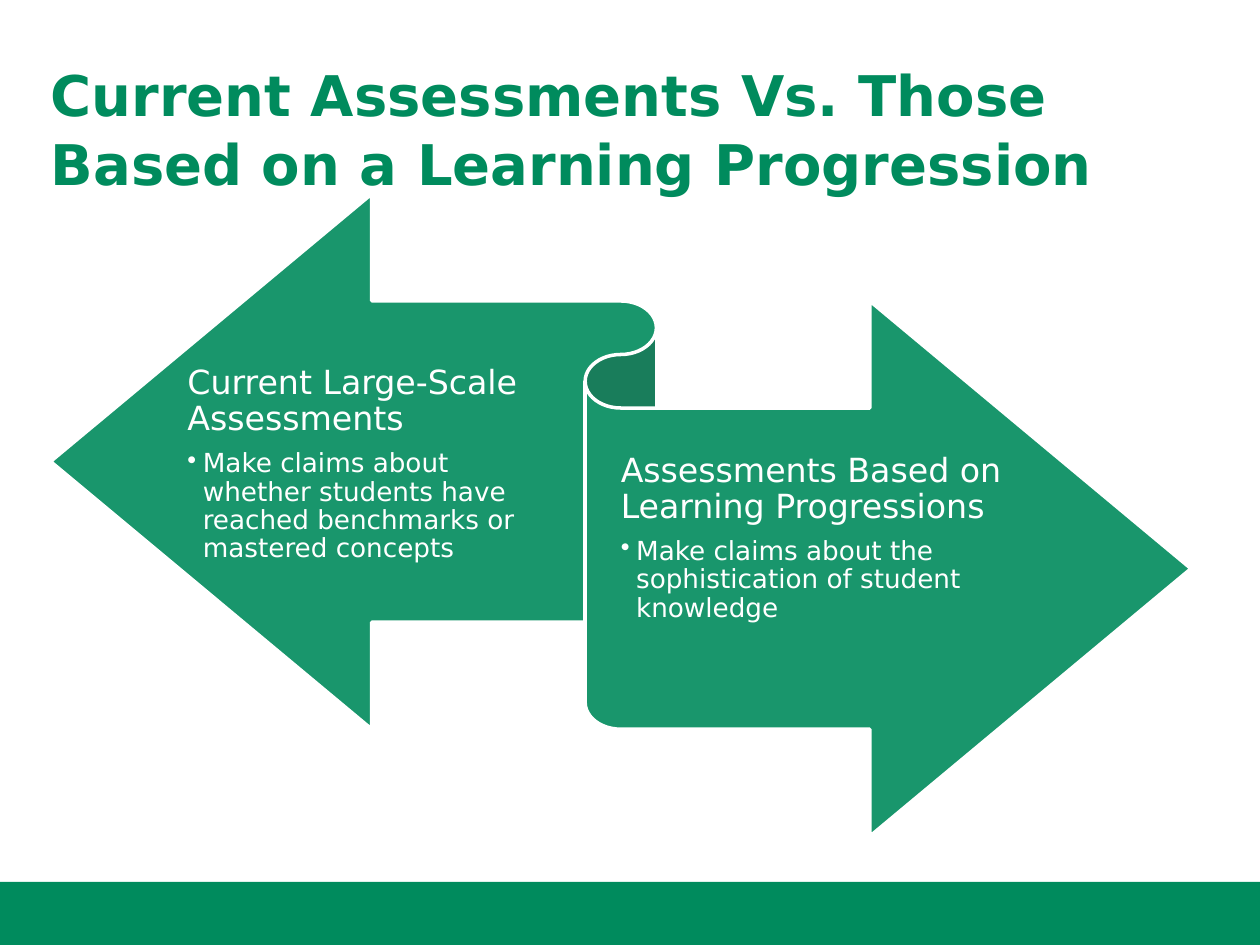
from lxml import etree
from pptx import Presentation
from pptx.dml.color import RGBColor
from pptx.enum import shapes, text
from pptx.oxml import ns
from pptx.util import Cm, Pt

COLORS = {"green": "008B5D", "white": "FFFFFF"}
FONT = "DejaVu Sans"
STYLES = {
    "title": {"size": Pt(32), "bold": True},
    "heading": {"size": Pt(19), "bold": False},
    "claim": {"size": Pt(15), "bold": False},
}
HANG = Cm(0.31)


def rgb(name):
    return RGBColor.from_string(COLORS[name])


def format_font(font, style, color):
    for key, value in {"name": FONT, **STYLES[style]}.items():
        setattr(font, key, value)
    font.color.rgb = rgb(color)


def format_frame(tf, anchor, left=0, top=0, right=0, bottom=0):
    """Set wrapping, anchor and insets (in cm) of a text frame."""
    values = {
        "word_wrap": True, "auto_size": text.MSO_AUTO_SIZE.NONE,
        "vertical_anchor": anchor, "margin_left": Cm(left),
        "margin_top": Cm(top), "margin_right": Cm(right),
        "margin_bottom": Cm(bottom),
    }
    for key, value in values.items():
        setattr(tf, key, value)


def place(sp, box):
    sp.left, sp.top, sp.width, sp.height = map(Cm, box)


def add_green_shape(s, kind, box):
    sp = s.shapes.add_shape(kind, *map(Cm, box))
    sp.shadow.inherit = False
    sp.fill.solid()
    sp.fill.fore_color.rgb = rgb("green")
    return sp


def add_band(s, box):
    add_green_shape(s, shapes.MSO_SHAPE.RECTANGLE, box).line.fill.background()


def add_title(s, box, words):
    sp = s.shapes.title
    place(sp, box)
    tf = sp.text_frame
    format_frame(tf, text.MSO_ANCHOR.TOP, top=0.08, right=0.25, bottom=0.13)
    p = tf.paragraphs[0]
    p.alignment = text.PP_ALIGN.LEFT
    p.line_spacing = 1.03
    r = p.add_run()
    r.text = words
    format_font(r.font, "title", "green")


def add_bullet(p):
    pPr = p._p.get_or_add_pPr()
    pPr.set("marL", str(HANG))
    pPr.set("indent", str(-HANG))
    etree.SubElement(pPr, ns.qn("a:buChar")).set("char", "•")


def add_claim(s, box, heading, claim):
    tf = s.shapes.add_textbox(*map(Cm, box)).text_frame
    format_frame(tf, text.MSO_ANCHOR.MIDDLE, top=0.18, bottom=0.2)
    head, item = tf.paragraphs[0], tf.add_paragraph()
    head.space_after = Pt(7)
    item.level = 1
    add_bullet(item)
    for p, words, style in ((head, heading, "heading"), (item, claim, "claim")):
        p.line_spacing = 0.9
        r = p.add_run()
        r.text = words
        format_font(r.font, style, "white")


def add_comparison(s, box, left_claim, right_claim):
    """Draw the two-way ribbon with one claim on each arrow."""
    x, y, w, h = box
    ribbon = add_green_shape(s, shapes.MSO_SHAPE.LEFT_RIGHT_RIBBON, box)
    color = ribbon.fill._xPr.find(".//" + ns.qn("a:srgbClr"))
    etree.SubElement(color, ns.qn("a:alpha")).set("val", "90000")
    ribbon.line.color.rgb = rgb("white")
    ribbon.line.width = Pt(2)
    text_h = 0.347 * h
    add_claim(s, (x + 0.12 * w, y + 0.249 * h, 0.33 * w, text_h), *left_claim)
    add_claim(s, (x + 0.5 * w, y + 0.363 * h, 0.39 * w, text_h), *right_claim)


def main():
    prs = Presentation()
    prs.slide_width, prs.slide_height = Cm(25.4), Cm(19.05)
    s = prs.slides.add_slide(prs.slide_layouts[5])
    add_band(s, (0, 17.78, 25.4, 1.27))
    add_title(s, (1.02, 1.09, 22.86, 2.49),
              "Current Assessments Vs. Those Based on a Learning Progression")
    add_comparison(
        s, (1.02, 3.91, 22.99, 12.95),
        ("Current Large-Scale Assessments",
         "Make claims about whether students have reached benchmarks "
         "or mastered concepts"),
        ("Assessments Based on Learning Progressions",
         "Make claims about the sophistication of student knowledge"))
    prs.save("out.pptx")


if __name__ == "__main__":
    main()
